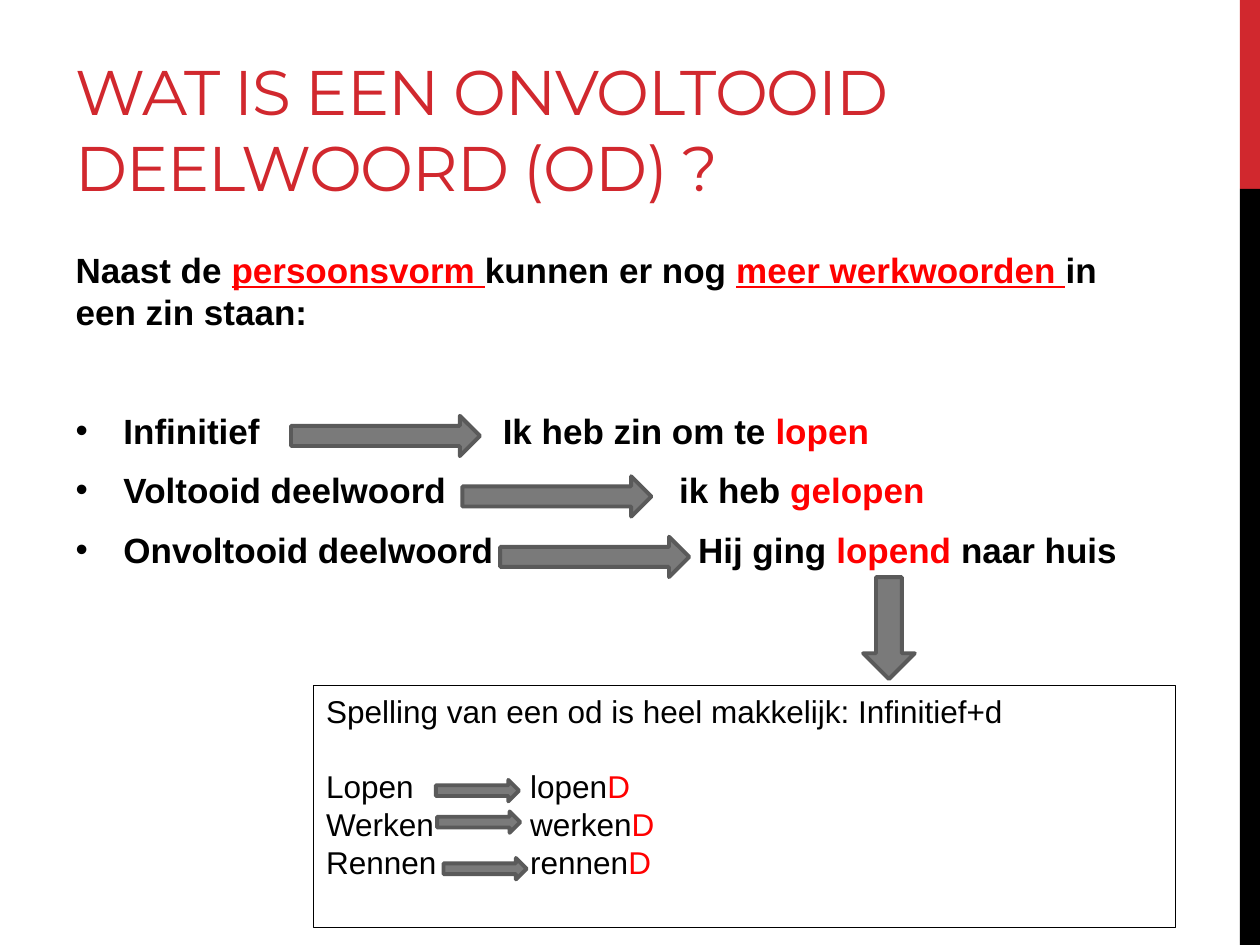
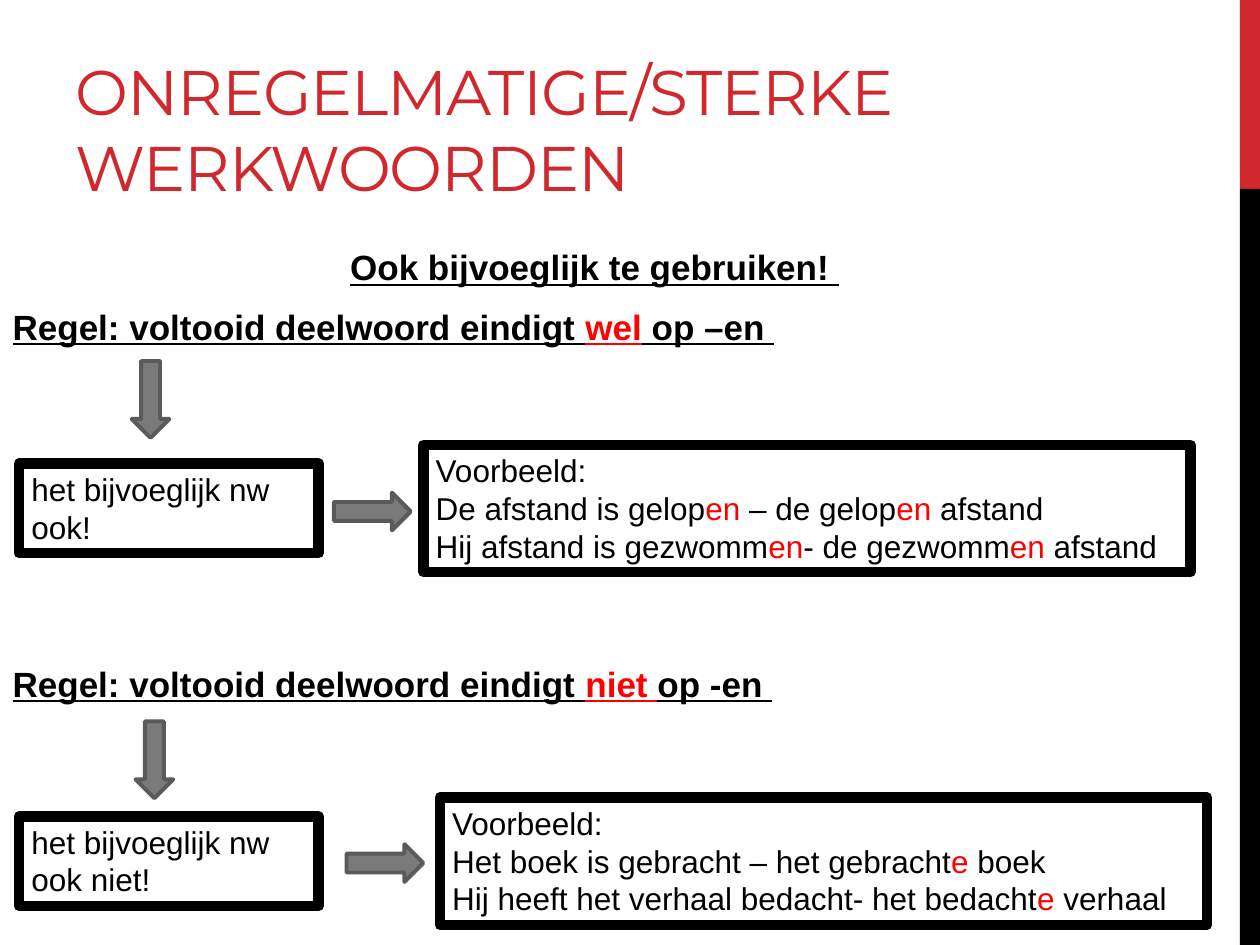
from dataclasses import dataclass
from typing import Optional

import lxml.etree
import pptx
import pptx.dml.color
import pptx.enum.shapes
import pptx.enum.text
import pptx.oxml.ns
import pptx.util

Inches = pptx.util.Inches
Pt = pptx.util.Pt
qn = pptx.oxml.ns.qn
MSO_SHAPE = pptx.enum.shapes.MSO_SHAPE
PP_ALIGN = pptx.enum.text.PP_ALIGN
MSO_ANCHOR = pptx.enum.text.MSO_ANCHOR

# Shared style
RED = pptx.dml.color.RGBColor(0xD1, 0x28, 0x2E)
HIGHLIGHT = pptx.dml.color.RGBColor(0xFF, 0x00, 0x00)
BLACK = pptx.dml.color.RGBColor(0x00, 0x00, 0x00)
ARROW_FILL = pptx.dml.color.RGBColor(0x7A, 0x7A, 0x7A)
ARROW_LINE = pptx.dml.color.RGBColor(0x5A, 0x5A, 0x5A)
TITLE_FONT = "Montserrat"
TEXT_FONT = "Arial"
BODY_SIZE, BOX_SIZE = 20, 18
SPACE_BEFORE, SPACE_AFTER = 4, 6
BODY_PITCH = 34  # one body line with its spacing, in points
BOX_PITCH = 21.6  # one line in a box, in points


@dataclass(frozen=True)
class Area:
    left: float
    top: float
    width: float
    height: float

    def emu(self) -> tuple:
        return tuple(Inches(v) for v in (self.left, self.top, self.width, self.height))


@dataclass(frozen=True)
class Span:
    text: str
    color: pptx.dml.color.RGBColor = BLACK
    underline: bool = False


@dataclass(frozen=True)
class Line:
    spans: tuple
    skipped: int = 0  # empty lines of room above
    bullet: bool = False
    tab: Optional[float] = None
    align: PP_ALIGN = PP_ALIGN.LEFT


@dataclass(frozen=True)
class Arrow:
    area: Area
    preset: MSO_SHAPE = MSO_SHAPE.RIGHT_ARROW
    rotation: int = 0


@dataclass(frozen=True)
class Box:
    area: Area
    lines: tuple
    border: Optional[float] = 6  # None gives plain text without a frame


@dataclass(frozen=True)
class Page:
    title: str
    title_area: Area
    body_area: Area
    body: tuple
    arrows: tuple
    boxes: tuple


def marked(text: str, underline: bool = False) -> tuple:
    """Split on *; every second piece is highlighted."""
    pieces = text.split("*")
    return tuple(Span(piece, HIGHLIGHT if i % 2 else BLACK, underline)
                 for i, piece in enumerate(pieces) if piece)


def example(text: str, **options) -> Line:
    return Line(marked(text), **options)


def rule(text: str, **options) -> Line:
    return Line(marked(text, underline=True), **options)


def write_lines(frame, lines: tuple, size: int, bold: bool, pitch: float,
                before: float, after: float) -> None:
    frame.word_wrap = True
    frame.auto_size = pptx.enum.text.MSO_AUTO_SIZE.NONE
    frame.vertical_anchor = MSO_ANCHOR.TOP
    for i, line in enumerate(lines):
        paragraph = frame.add_paragraph() if i else frame.paragraphs[0]
        paragraph.alignment = line.align
        paragraph.space_before = Pt(before + line.skipped * pitch)
        paragraph.space_after = Pt(after)
        # Bullets, indents and tab stops
        props = paragraph._p.get_or_add_pPr()
        indent = Inches(0.38) if line.bullet else 0
        props.set("marL", str(indent))
        props.set("indent", str(-indent))
        if line.bullet:
            lxml.etree.SubElement(props, qn("a:buFont"), typeface=TEXT_FONT)
            lxml.etree.SubElement(props, qn("a:buChar"), char="•")
        else:
            lxml.etree.SubElement(props, qn("a:buNone"))
        if line.tab is not None:
            stops = lxml.etree.SubElement(props, qn("a:tabLst"))
            lxml.etree.SubElement(stops, qn("a:tab"), pos=str(Inches(line.tab)), algn="l")
        for span in line.spans:
            run = paragraph.add_run()
            run.text = span.text
            run.font.name = TEXT_FONT
            run.font.size = Pt(size)
            run.font.bold = bold
            run.font.underline = span.underline
            run.font.color.rgb = span.color


def place(shape, area: Area) -> None:
    shape.left, shape.top, shape.width, shape.height = area.emu()


def draw_bands(slide) -> None:
    for top, height, color in ((0, 1.5, RED), (1.5, 6, BLACK)):
        band = slide.shapes.add_shape(MSO_SHAPE.RECTANGLE,
                                      *Area(9.84, top, 0.16, height).emu())
        band.shadow.inherit = False
        band.fill.solid()
        band.fill.fore_color.rgb = color
        band.line.fill.background()


def draw_title(slide, text: str, area: Area) -> None:
    title = slide.shapes.title
    place(title, area)
    frame = title.text_frame
    frame.word_wrap = True
    frame.auto_size = pptx.enum.text.MSO_AUTO_SIZE.NONE
    frame.vertical_anchor = MSO_ANCHOR.BOTTOM
    frame.paragraphs[0].alignment = PP_ALIGN.LEFT
    run = frame.paragraphs[0].add_run()
    run.text = text
    run.font.name = TITLE_FONT
    run.font.size = Pt(36)
    run.font.color.rgb = RED
    run._r.get_or_add_rPr().set("spc", "-60")


def draw_arrow(slide, arrow: Arrow) -> None:
    shape = slide.shapes.add_shape(arrow.preset, *arrow.area.emu())
    shape.rotation = arrow.rotation
    shape.shadow.inherit = False
    shape.fill.solid()
    shape.fill.fore_color.rgb = ARROW_FILL
    shape.line.color.rgb = ARROW_LINE
    shape.line.width = Pt(2.25)


def draw_box(slide, box: Box) -> None:
    if box.border is None:
        shape = slide.shapes.add_textbox(*box.area.emu())
    else:
        shape = slide.shapes.add_shape(MSO_SHAPE.RECTANGLE, *box.area.emu())
        shape.shadow.inherit = False
        shape.fill.background()
        shape.line.color.rgb = BLACK
        shape.line.width = Pt(box.border)
    write_lines(shape.text_frame, box.lines, BOX_SIZE, False, BOX_PITCH, 0, 0)


def draw_page(deck, page: Page) -> None:
    slide = deck.slides.add_slide(deck.slide_layouts[1])
    draw_bands(slide)
    draw_title(slide, page.title, page.title_area)
    body = slide.placeholders[1]
    place(body, page.body_area)
    write_lines(body.text_frame, page.body, BODY_SIZE, True, BODY_PITCH,
                SPACE_BEFORE, SPACE_AFTER)
    for arrow in page.arrows:
        draw_arrow(slide, arrow)
    for box in page.boxes:
        draw_box(slide, box)


# Slide 1: what the present participle is
form_arrows = tuple(Arrow(Area(left, 3.3 + 0.48 * i, 1.5, 0.32))
                    for i, left in enumerate((2.31, 3.67, 3.97)))
spelling_arrows = tuple(Arrow(Area(left, top, 0.66, 0.17))
                        for left, top in ((3.46, 6.19), (3.47, 6.44), (3.52, 6.81)))
PARTICIPLE = Page(
    title="WAT IS EEN ONVOLTOOID DEELWOORD (OD) ?",
    title_area=Area(0.5, 0.17, 7.57, 1.5),
    body_area=Area(0.5, 1.92, 8.83, 4.78),
    body=(
        Line((Span("Naast de "), Span("persoonsvorm ", HIGHLIGHT, True),
              Span("kunnen er nog "), Span("meer werkwoorden ", HIGHLIGHT, True),
              Span("in een zin staan:"))),
        example("Infinitief\tIk heb zin om te *lopen*", skipped=1, bullet=True, tab=3.39),
        example("Voltooid deelwoord\tik heb *gelopen*", bullet=True, tab=4.79),
        example("Onvoltooid deelwoord\tHij ging *lopend* naar huis", bullet=True, tab=4.94),
    ),
    arrows=form_arrows + spelling_arrows
    + (Arrow(Area(6.85, 4.58, 0.41, 0.81), MSO_SHAPE.DOWN_ARROW),),
    boxes=(
        Box(Area(2.49, 5.44, 6.84, 1.92), (
            example("Spelling van een od is heel makkelijk: Infinitief+d"),
            example("Lopen", skipped=1),
            example("Werken"),
            example("Rennen"),
        ), border=0.75),
        # Participles, level with their infinitives
        Box(Area(4.11, 6.04, 1.5, 1), tuple(
            example(f"{verb}*D*") for verb in ("lopen", "werken", "rennen")), border=None),
    ),
)

# Slide 2: irregular verbs used as adjectives
IRREGULAR = Page(
    title="ONREGELMATIGE/STERKE WERKWOORDEN",
    title_area=Area(0.5, 0.17, 9.34, 1.5),
    body_area=Area(0, 1.9, 9.44, 4.78),
    body=(
        rule("Ook bijvoeglijk te gebruiken! ", align=PP_ALIGN.CENTER),
        rule("Regel: voltooid deelwoord eindigt *wel* op –en "),
        rule("Regel: voltooid deelwoord eindigt *niet *op -en ", skipped=5),
    ),
    arrows=tuple(Arrow(Area(left, top, 0.61, 0.3), rotation=rotation)
                 for left, top, rotation in ((0.89, 3.02, 90), (2.65, 3.91, 0),
                                             (0.92, 5.88, 90), (2.75, 6.7, 0))),
    boxes=(
        Box(Area(0.15, 3.68, 2.38, 0.71), (example("het bijvoeglijk nw ook!"),)),
        Box(Area(3.36, 3.53, 6.09, 1.01), (
            example("Voorbeeld:"),
            example("De afstand is gelop*en* – de gelop*en* afstand"),
            example("Hij afstand is gezwomm*en*- de gezwomm*en* afstand"),
        )),
        Box(Area(0.15, 6.48, 2.38, 0.71), (example("het bijvoeglijk nw ook niet!"),)),
        Box(Area(3.49, 6.33, 6.09, 1.01), (
            example("Voorbeeld:"),
            example("Het boek is gebracht – het gebracht*e* boek"),
            example("Hij heeft het verhaal bedacht- het bedacht*e* verhaal"),
        )),
    ),
)


def main() -> None:
    deck = pptx.Presentation()
    deck.slide_width, deck.slide_height = Inches(10), Inches(7.5)
    for page in (PARTICIPLE, IRREGULAR):
        draw_page(deck, page)
    deck.save("out.pptx")


if __name__ == "__main__":
    main()
